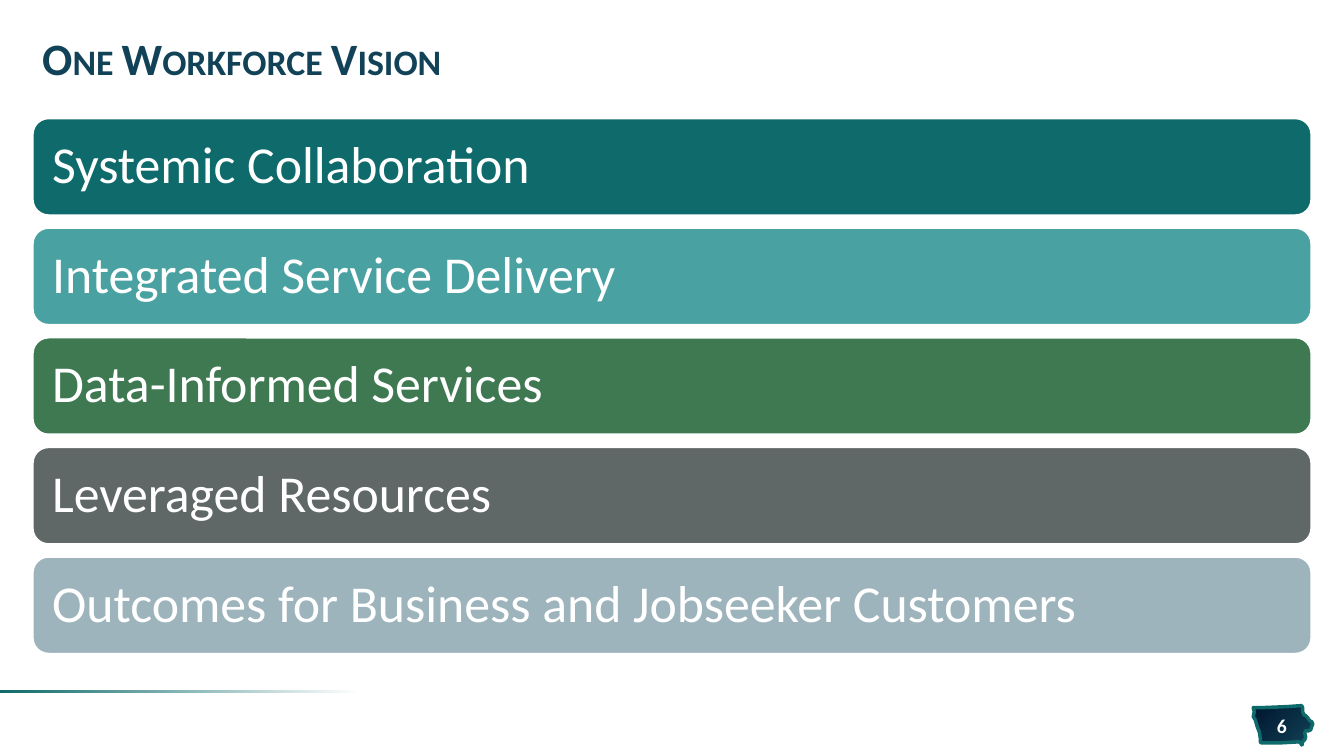
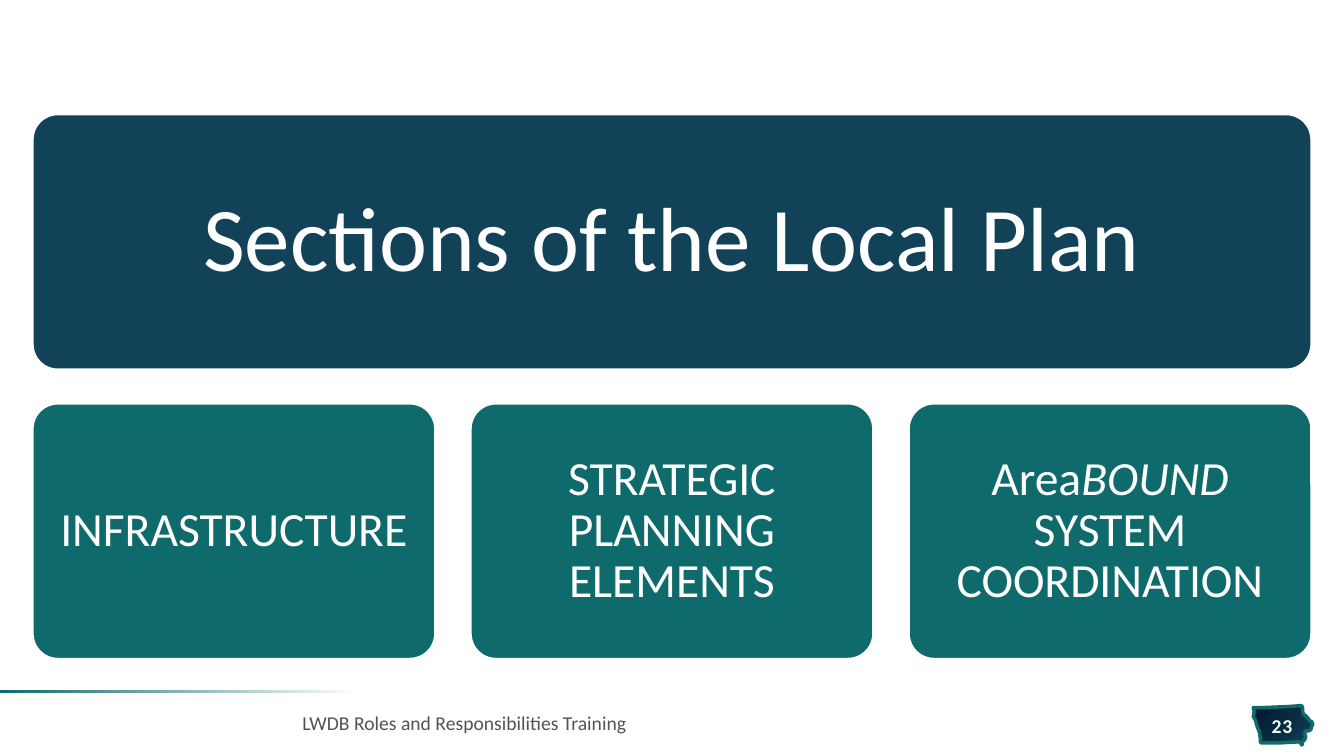
from dataclasses import dataclass

from pptx import Presentation
from pptx import util as u
from pptx.dml.color import RGBColor
from pptx.enum import shapes, text


@dataclass(frozen=True)
class Theme:
    font: str = "Calibri"
    white: str = "FFFFFF"
    night: str = "00162E"
    navy: str = "114257"
    teal: str = "0F6A6B"
    aqua: str = "49A1A2"
    green: str = "3E7951"
    slate: str = "5F6866"
    mist: str = "9DB4BC"
    grey: str = "535355"
    title: int = 32
    bar: int = 37
    hero: int = 65
    card: int = 34
    small: int = 14


T = Theme()

# Page grid, in inches
SLIDE_W, SLIDE_H = 13.33, 7.5
MARGIN = 0.32
CONTENT_W = SLIDE_W - 2 * MARGIN

# State-shaped page badge, in hundredths of an inch
BADGE = [
    (1291, 700), (1277, 701), (1253, 702), (1243, 702), (1244, 706),
    (1243, 711), (1245, 714), (1247, 721), (1249, 726), (1250, 732),
    (1250, 736), (1251, 737), (1269, 737), (1288, 736), (1290, 737),
    (1291, 739), (1292, 738), (1291, 737), (1294, 734), (1295, 731),
    (1294, 727), (1295, 725), (1298, 725), (1300, 724), (1301, 721),
    (1302, 718), (1301, 716), (1299, 715), (1297, 712), (1295, 710),
    (1293, 709), (1292, 706), (1292, 702),
]


def rgb(color):
    return RGBColor.from_string(color)


def spread(start, total, size, count):
    """Starts of equal items that fill a length with equal gaps."""
    step = (total - size) / (count - 1)
    return [start + i * step for i in range(count)]


def write(sp, runs, size, color, align=text.PP_ALIGN.LEFT, inset=(0.1, 0.05),
          spacing=1.0, bold=False):
    """Fill a shape with one paragraph; runs are (text, italic) pairs."""
    tf = sp.text_frame
    tf.word_wrap = True
    tf.vertical_anchor = text.MSO_ANCHOR.MIDDLE
    tf.margin_left = tf.margin_right = u.Inches(inset[0])
    tf.margin_top = tf.margin_bottom = u.Inches(inset[1])
    p = tf.paragraphs[0]
    p.alignment = align
    p.line_spacing = spacing
    for words, italic in runs:
        r = p.add_run()
        r.text = words
        r.font.name, r.font.size = T.font, u.Pt(size)
        r.font.bold, r.font.italic = bold, italic
        r.font.color.rgb = rgb(color)
    return p


def add_text(s, x, y, w, h, words, size, color, **style):
    sp = s.shapes.add_textbox(*map(u.Inches, (x, y, w, h)))
    return write(sp, [(words, False)], size, color, **style)


def add_panel(s, x, y, w, h, color, runs, size, inset, radius=None,
              align=text.PP_ALIGN.CENTER):
    sp = s.shapes.add_shape(shapes.MSO_SHAPE.ROUNDED_RECTANGLE,
                            *map(u.Inches, (x, y, w, h)))
    if radius is not None:
        sp.adjustments[0] = radius
    sp.shadow.inherit = False
    sp.fill.solid()
    sp.fill.fore_color.rgb = rgb(color)
    sp.line.color.rgb = rgb(T.white)
    sp.line.width = u.Pt(2)
    write(sp, runs, size, T.white, align, (inset, inset), spacing=0.9)


def fill_gradient(sp, stops, angle):
    sp.shadow.inherit = False
    sp.fill.gradient()
    sp.fill.gradient_angle = angle
    for stop, (position, color) in zip(sp.fill.gradient_stops, stops):
        stop.position = position
        stop.color.rgb = rgb(color)


def add_title(s, words):
    p = add_text(s, MARGIN, 0.24, CONTENT_W, 0.75, words, T.title, T.navy,
                 spacing=0.85, bold=True)
    p.runs[0].font._element.set("cap", "small")


def add_page(prs, number):
    """New slide with the shared badge, rule and page number."""
    s = prs.slides.add_slide(prs.slide_layouts[6])

    # Badge
    builder = s.shapes.build_freeform(*BADGE[0], scale=u.Inches(0.01))
    builder.add_line_segments(BADGE[1:], close=True)
    badge = builder.convert_to_shape()
    fill_gradient(badge, [(0, T.night), (1, T.navy)], 315)
    badge.line.color.rgb = rgb(T.teal)
    badge.line.width = u.Pt(2.5)

    # Fading rule
    rule = s.shapes.add_shape(shapes.MSO_SHAPE.RECTANGLE,
                              *map(u.Inches, (0, 6.85, 3.8, 0.03)))
    fill_gradient(rule, [(0.06, T.white), (1, T.teal)], 180)
    rule.line.fill.background()

    # Page number
    p = add_text(s, 12.46, 7.08, 0.51, 0.23, str(number), T.small, T.white,
                 align=text.PP_ALIGN.CENTER, inset=(0, 0.05), bold=True)
    p.runs[0].font._element.set("spc", "50")
    return s


def vision_slide(prs):
    s = add_page(prs, 6)
    add_title(s, "One Workforce Vision")
    bars = [
        ("Systemic Collaboration", T.teal),
        ("Integrated Service Delivery", T.aqua),
        ("Data-Informed Services", T.green),
        ("Leveraged Resources", T.slate),
        ("Outcomes for Business and Jobseeker Customers", T.mist),
    ]
    height = 0.97
    for y, (words, color) in zip(spread(1.17, 5.32, height, len(bars)), bars):
        add_panel(s, MARGIN, y, CONTENT_W, height, color, [(words, False)],
                  T.bar, 0.15, align=text.PP_ALIGN.LEFT)


def plan_slide(prs):
    s = add_page(prs, 23)
    width, height = 4, 2.54

    # Heading panel
    add_panel(s, MARGIN, 1.13, CONTENT_W, height, T.navy,
              [("Sections of the Local Plan", False)], T.hero, 0.27, 0.1)

    # Section cards
    cards = [
        [("INFRASTRUCTURE", False)],
        [("STRATEGIC PLANNING ELEMENTS", False)],
        [("Area", False), ("BOUND", True), (" SYSTEM COORDINATION", False)],
    ]
    for x, runs in zip(spread(MARGIN, CONTENT_W, width, len(cards)), cards):
        add_panel(s, x, 4, width, height, T.teal, runs, T.card, 0.14, 0.1)

    # Footer
    add_text(s, 2.9, 6.97, 9.06, 0.4,
             "LWDB Roles and Responsibilities Training", T.small, T.grey)


def main():
    prs = Presentation()
    prs.slide_width, prs.slide_height = u.Inches(SLIDE_W), u.Inches(SLIDE_H)
    vision_slide(prs)
    plan_slide(prs)
    prs.save("out.pptx")


if __name__ == "__main__":
    main()
